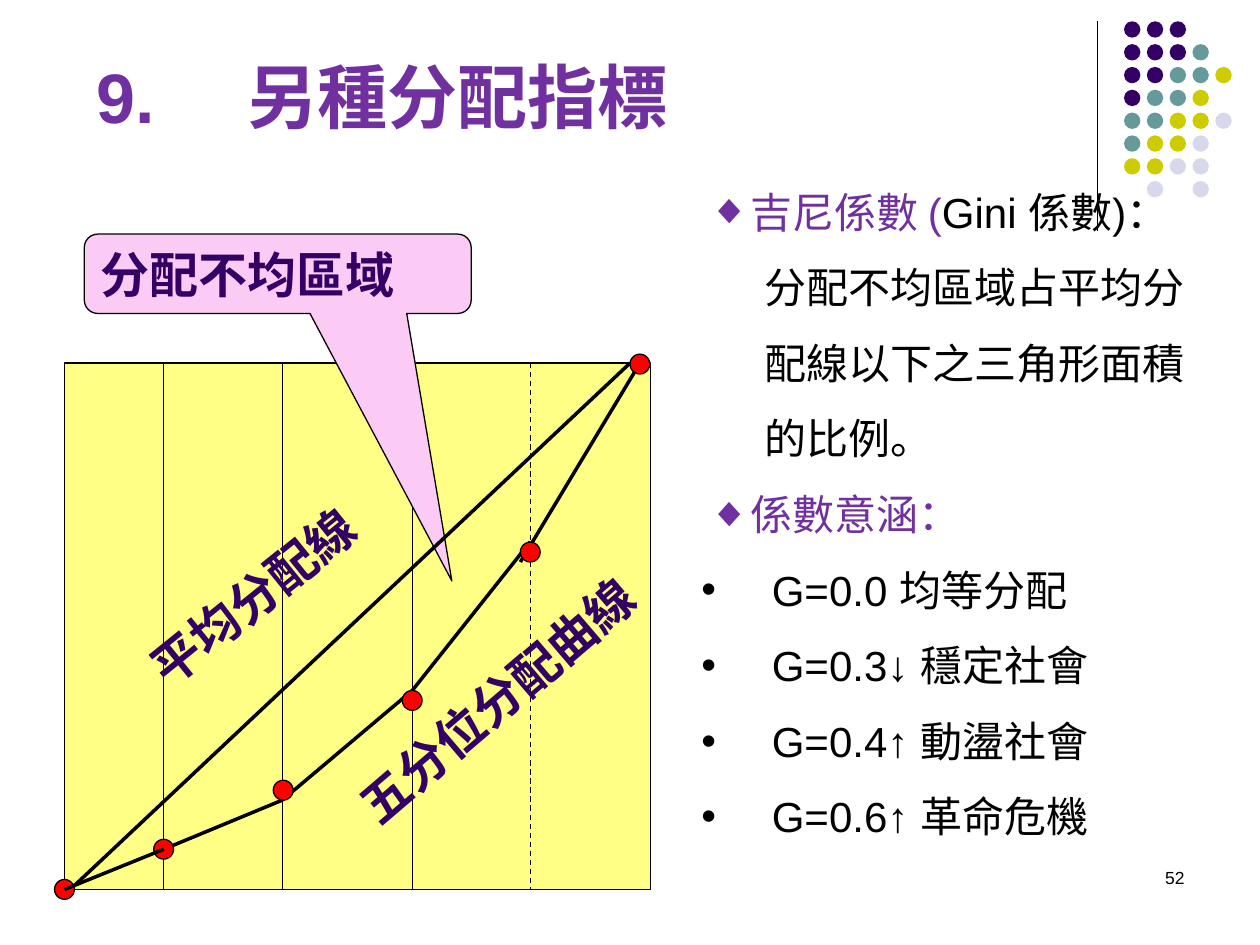
from dataclasses import dataclass

from lxml.etree import SubElement
from pptx import Presentation
from pptx.dml.color import RGBColor
from pptx.enum.dml import MSO_LINE
from pptx.enum.shapes import MSO_CONNECTOR, MSO_SHAPE
from pptx.enum.text import MSO_ANCHOR, PP_ALIGN
from pptx.oxml.ns import qn
from pptx.util import Cm, Pt


@dataclass(frozen=True)
class Theme:
    font: str = "Arial"
    black: str = "000000"
    purple: str = "7030A0"
    indigo: str = "330066"
    teal: str = "669999"
    olive: str = "CCCC00"
    lilac: str = "D8D8EC"
    yellow: str = "FFFF85"
    pink: str = "FBCBF5"
    red: str = "FF0000"
    title: float = 40
    label: float = 28
    body: float = 24
    number: float = 10
    thin: float = 0.75
    thick: float = 2


@dataclass(frozen=True)
class Box:
    left: float
    top: float
    width: float
    height: float

    def lengths(self) -> tuple:
        return Cm(self.left), Cm(self.top), Cm(self.width), Cm(self.height)


@dataclass(frozen=True)
class Segment:
    x1: float
    y1: float
    x2: float
    y2: float
    weight: float = Theme.thick
    dashed: bool = False


@dataclass(frozen=True)
class Item:
    runs: tuple
    bullet: str = ""
    margin: float = 0
    indent: float = 0


T = Theme()
PLOT = Box(1.3, 7.32, 11.81, 10.61)
BOTTOM = PLOT.top + PLOT.height
POINT_SIZE = 0.4
DOT_SIZE, DOT_STEP = 0.33, 0.46
DOT_COLORS = {"I": T.indigo, "T": T.teal, "O": T.olive, "L": T.lilac}
DOT_ROWS = ("III", "IIIT", "IITTO", "ITTO", "TTOOL", "TOOL", "OOLL", " L L")

DIVIDERS = [Segment(x, PLOT.top, x, BOTTOM, T.thin, x == 10.69)
            for x in (10.69, 3.3, 8.31, 5.69)]
CURVE = (
    Segment(10.49, 11.33, 12.9, 7.32),
    Segment(3.3, 17.12, 5.69, 16.13),
    Segment(5.69, 16.13, 8.31, 13.92),
    Segment(8.31, 13.92, 10.69, 10.92),
)
FIRST_QUINTILE = Segment(1.3, 17.93, 3.3, 17.12)
EQUALITY = Segment(1.47, 17.88, 12.7, 7.32)
POINTS = ((1.3, 17.93), (12.9, 7.34), (8.31, 14.12), (3.3, 17.12), (5.71, 15.93))
FOURTH_POINT = (10.69, 11.13)

HEADING = {"bullet": "◆", "indent": 0.15}
MEANINGS = ("G=0.0 均等分配", "G=0.3↓ 穩定社會", "G=0.4↑ 動盪社會", "G=0.6↑ 革命危機")
ITEMS = [
    Item((("吉尼係數 (", T.purple), ("Gini 係數)：", T.black)), **HEADING),
    Item((("分配不均區域占平均分配線以下之三角形面積的比例。", T.black),), margin=1.27),
    Item((("係數意涵：", T.purple),), **HEADING),
    *(Item(((text, T.black),), "•", 1.42, -1.42) for text in MEANINGS),
]


def rgb(color: str) -> RGBColor:
    return RGBColor.from_string(color)


def format_run(r, size: float, color: str, bold: bool = False) -> None:
    r.font.name = T.font
    r.font.size = Pt(size)
    r.font.bold = bold
    r.font.color.rgb = rgb(color)


def add_shape(slide, kind, box: Box, fill: str, outlined: bool = True):
    sp = slide.shapes.add_shape(kind, *box.lengths())
    sp.shadow.inherit = False
    sp.fill.solid()
    sp.fill.fore_color.rgb = rgb(fill)
    if outlined:
        sp.line.color.rgb = rgb(T.black)
        sp.line.width = Pt(T.thin)
    else:
        sp.line.fill.background()
    return sp


def add_line(slide, seg: Segment) -> None:
    line = slide.shapes.add_connector(
        MSO_CONNECTOR.STRAIGHT, Cm(seg.x1), Cm(seg.y1), Cm(seg.x2), Cm(seg.y2))
    line.line.color.rgb = rgb(T.black)
    line.line.width = Pt(seg.weight)
    if seg.dashed:
        line.line.dash_style = MSO_LINE.DASH
    SubElement(line._element.spPr, qn("a:effectLst"))


def add_point(slide, x: float, y: float) -> None:
    half = POINT_SIZE / 2
    add_shape(slide, MSO_SHAPE.OVAL, Box(x - half, y - half, POINT_SIZE, POINT_SIZE), T.red)


def write(sp, text: str, size: float, color: str, bold: bool = True,
          align=PP_ALIGN.LEFT, anchor=MSO_ANCHOR.MIDDLE, wrap: bool = True):
    tf = sp.text_frame
    tf.word_wrap = wrap
    tf.vertical_anchor = anchor
    p = tf.paragraphs[0]
    p.text = text
    p.alignment = align
    format_run(p.runs[0], size, color, bold)
    return p


def add_dots(slide) -> None:
    for row, codes in enumerate(DOT_ROWS):
        for col, code in enumerate(codes):
            if code in DOT_COLORS:
                box = Box(22.66 + col * DOT_STEP, 0.43 + row * DOT_STEP, DOT_SIZE, DOT_SIZE)
                add_shape(slide, MSO_SHAPE.OVAL, box, DOT_COLORS[code], outlined=False)


def add_title(slide) -> None:
    sp = slide.shapes.add_textbox(*Box(1.7, 0.74, 20.4, 2.39).lengths())
    p = write(sp, "9.\t另種分配指標", T.title, T.purple)
    tabs = SubElement(p._p.get_or_add_pPr(), qn("a:tabLst"))
    SubElement(tabs, qn("a:tab"), pos=str(Cm(3.05)), algn="l")


def add_label(slide, text: str, box: Box, rotation: float) -> None:
    sp = slide.shapes.add_textbox(*box.lengths())
    sp.rotation = rotation
    write(sp, text, T.label, T.indigo, align=PP_ALIGN.CENTER, wrap=False)


def add_callout(slide) -> None:
    sp = add_shape(slide, MSO_SHAPE.ROUNDED_RECTANGULAR_CALLOUT,
                   Box(1.7, 4.72, 7.8, 1.6), T.pink)
    for i, value in enumerate((0.45, 3.87, 0.17)):
        sp.adjustments[i] = value
    write(sp, "分配不均區域", T.label, T.indigo)


def add_body(slide, items: list) -> None:
    tf = slide.shapes.add_textbox(*Box(13.89, 3.12, 10.39, 13.94).lengths()).text_frame
    tf.word_wrap = True
    for i, item in enumerate(items):
        p = tf.add_paragraph() if i else tf.paragraphs[0]
        p.line_spacing = 1.5
        pPr = p._p.get_or_add_pPr()
        pPr.set("marL", str(Cm(item.margin)))
        pPr.set("indent", str(Cm(item.indent)))
        if item.bullet:
            SubElement(pPr, qn("a:buFont"), typeface=T.font)
            SubElement(pPr, qn("a:buChar"), char=item.bullet)
        for text, color in item.runs:
            r = p.add_run()
            r.text = text
            format_run(r, T.body, color)


def main() -> None:
    prs = Presentation()
    prs.slide_width, prs.slide_height = Cm(25.4), Cm(19.05)
    slide = prs.slides.add_slide(prs.slide_layouts[6])
    add_line(slide, Segment(22.12, 0.43, 22.12, 4.65, T.thin))
    add_dots(slide)
    add_title(slide)
    add_shape(slide, MSO_SHAPE.RECTANGLE, PLOT, T.yellow)
    for seg in (*DIVIDERS, *CURVE):
        add_line(slide, seg)
    for x, y in POINTS:
        add_point(slide, x, y)
    add_label(slide, "平均分配線", Box(2.34, 11.3, 5.51, 1.45), 321)
    add_label(slide, "五分位分配曲線", Box(6.27, 13.39, 7.49, 1.45), 319.5)
    add_callout(slide)
    add_body(slide, ITEMS)
    number = slide.shapes.add_textbox(*Box(18.21, 17.35, 5.92, 1.27).lengths())
    write(number, "52", T.number, T.black, False, PP_ALIGN.RIGHT, MSO_ANCHOR.TOP)
    add_line(slide, FIRST_QUINTILE)
    add_point(slide, *FOURTH_POINT)
    add_line(slide, EQUALITY)
    prs.save("out.pptx")


if __name__ == "__main__":
    main()
